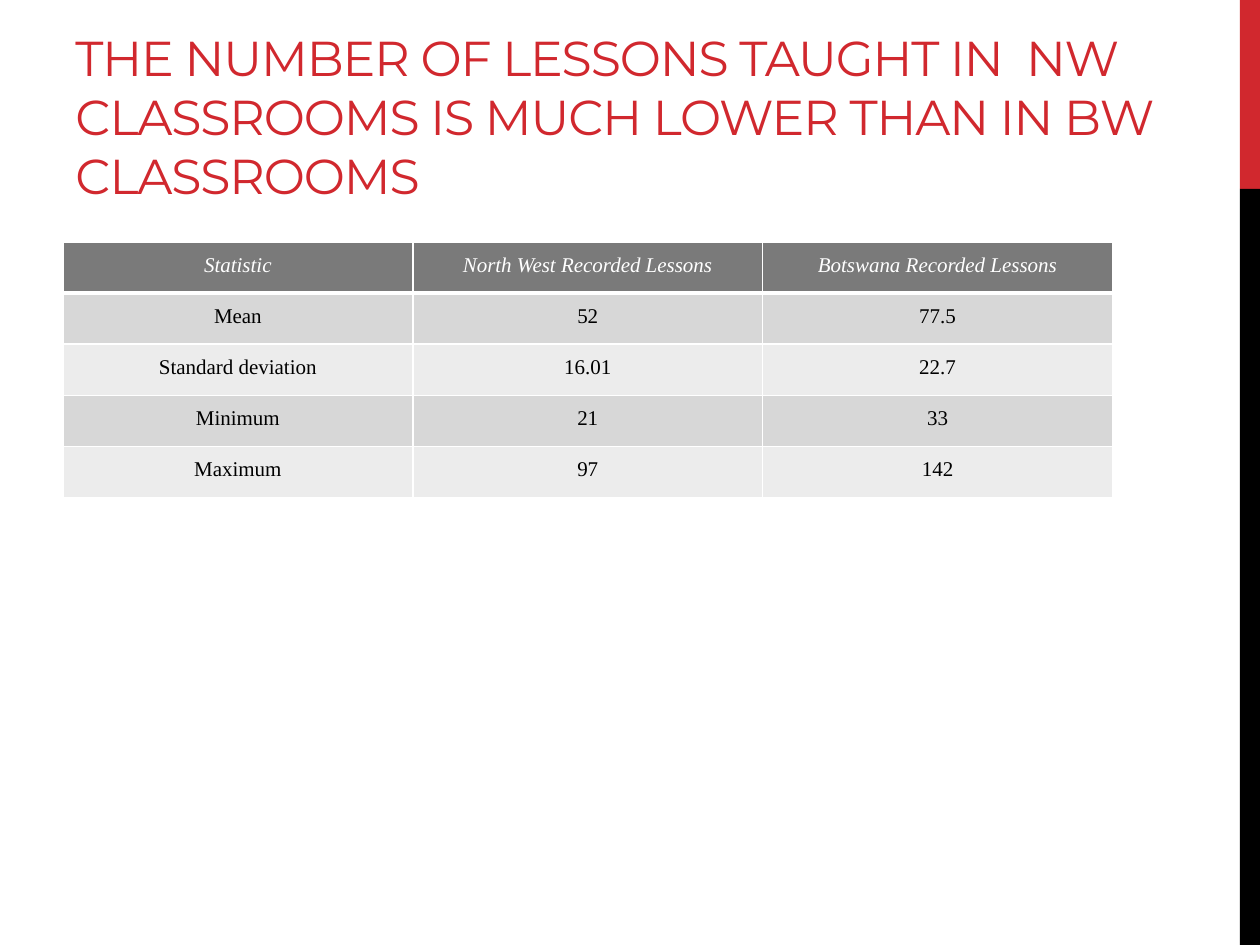
from lxml.etree import SubElement
from pptx import Presentation
from pptx.dml.color import RGBColor
from pptx.enum.shapes import MSO_SHAPE
from pptx.enum.text import MSO_ANCHOR, PP_ALIGN
from pptx.oxml.ns import qn
from pptx.util import Inches, Pt

COLORS = {
    "red": "D1282E",
    "black": "000000",
    "white": "FFFFFF",
    "header": "7A7A7A",
    "odd_row": "D7D7D7",
    "even_row": "ECECEC",
}

TITLE = ("THE NUMBER OF LESSONS TAUGHT IN  NW CLASSROOMS "
         "IS MUCH LOWER THAN IN BW CLASSROOMS")

STATISTICS = [
    ("Statistic", "North West Recorded Lessons", "Botswana Recorded Lessons"),
    ("Mean", "52", "77.5"),
    ("Standard deviation", "16.01", "22.7"),
    ("Minimum", "21", "33"),
    ("Maximum", "97", "142"),
]


def color(name):
    return RGBColor.from_string(COLORS[name])


def add_side_bar(slide, left, top, width, height):
    """Vertical bar: the top fifth red, the rest black."""
    red_height = height / 5
    parts = [("red", top, red_height),
             ("black", top + red_height, height - red_height)]
    for name, part_top, part_height in parts:
        shape = slide.shapes.add_shape(
            MSO_SHAPE.RECTANGLE, Inches(left), Inches(part_top),
            Inches(width), Inches(part_height))
        shape.shadow.inherit = False
        shape.fill.solid()
        shape.fill.fore_color.rgb = color(name)
        shape.line.fill.background()


def add_title(slide, left, top, width, height):
    text_box = slide.shapes.add_textbox(
        Inches(left), Inches(top), Inches(width), Inches(height))
    text_frame = text_box.text_frame
    text_frame.word_wrap = True
    text_frame.vertical_anchor = MSO_ANCHOR.BOTTOM
    text_frame.text = TITLE
    run = text_frame.paragraphs[0].runs[0]
    run.font.name = "Montserrat"
    run.font.size = Pt(28)
    run.font.color.rgb = color("red")
    # Letter spacing in hundredths of a point
    run.font._element.set("spc", "-60")


def set_borders(cell, bottom_width):
    """White borders, 1 pt except for the bottom one."""
    properties = cell._tc.get_or_add_tcPr()
    widths = {"a:lnL": 1, "a:lnR": 1, "a:lnT": 1, "a:lnB": bottom_width}
    for tag, width in widths.items():
        line = SubElement(properties, qn(tag), w=str(Pt(width)))
        fill = SubElement(line, qn("a:solidFill"))
        SubElement(fill, qn("a:srgbClr"), val=COLORS["white"])


def format_cell(cell, text, row_index):
    is_header = row_index == 0
    if is_header:
        fill_name = "header"
    else:
        fill_name = "odd_row" if row_index % 2 else "even_row"
    set_borders(cell, bottom_width=3 if is_header else 1)
    cell.fill.solid()
    cell.fill.fore_color.rgb = color(fill_name)
    cell.margin_left = cell.margin_right = Inches(0.07)
    cell.margin_top = cell.margin_bottom = 0

    cell.text_frame.text = text
    paragraph = cell.text_frame.paragraphs[0]
    paragraph.alignment = PP_ALIGN.CENTER
    paragraph.line_spacing = 1.5
    font = paragraph.runs[0].font
    font.name = "Times New Roman"
    font.size = Pt(12)
    font.bold = False
    font.italic = is_header
    font.color.rgb = color("white" if is_header else "black")


def add_statistics_table(slide, left, top, width, height):
    table = slide.shapes.add_table(
        len(STATISTICS), len(STATISTICS[0]), Inches(left), Inches(top),
        Inches(width), Inches(height)).table
    for row_index, values in enumerate(STATISTICS):
        for column_index, text in enumerate(values):
            format_cell(table.cell(row_index, column_index), text, row_index)


def main():
    presentation = Presentation()
    presentation.slide_width = Inches(10)
    presentation.slide_height = Inches(7.5)
    slide = presentation.slides.add_slide(presentation.slide_layouts[6])

    add_side_bar(slide, 9.84, 0, 0.16, 7.5)
    add_title(slide, 0.5, 0.17, 8.92, 1.5)
    add_statistics_table(slide, 0.5, 1.92, 8.33, 2.03)

    presentation.save("out.pptx")


if __name__ == "__main__":
    main()
